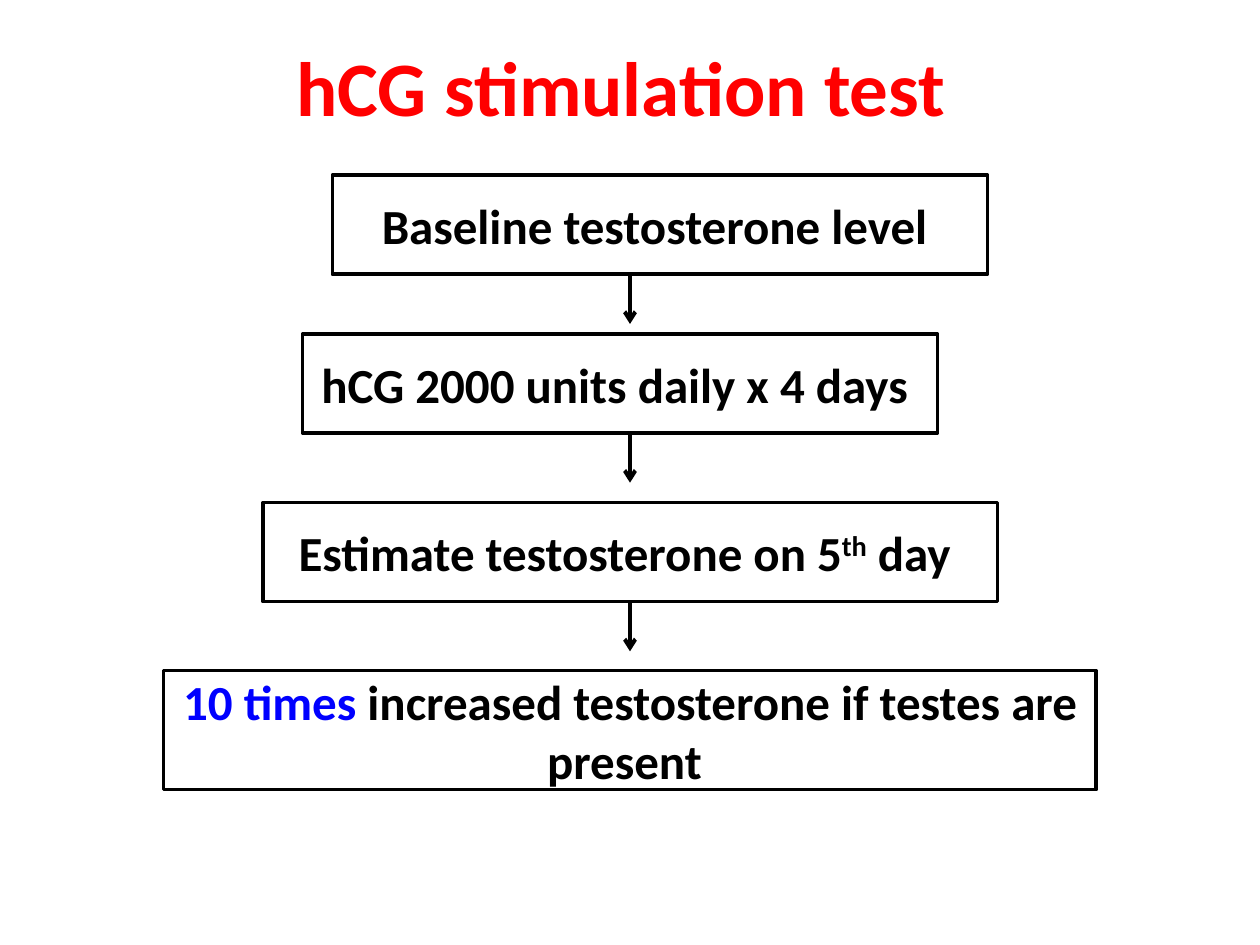
import pptx
import pptx.dml.color
import pptx.enum.shapes
import pptx.enum.text
import pptx.oxml
import pptx.oxml.ns
import pptx.util
from lxml import etree
from pptx.util import Cm, Pt


def rgb(value):
    return pptx.dml.color.RGBColor.from_string(value)


class FlowSlide:
    font = "Calibri"
    ink = "000000"
    paper = "FFFFFF"
    title_color = "FF0000"
    accent = "0000FF"

    def __init__(self, prs):
        self.s = prs.slides.add_slide(prs.slide_layouts[5])

    def style(self, p, size, color):
        p.alignment = pptx.enum.text.PP_ALIGN.CENTER
        p.font.name = self.font
        p.font.size = Pt(size)
        p.font.bold = True
        p.font.color.rgb = rgb(color)

    def title(self, text, left, top, width, height):
        sp = self.s.shapes.title
        sp.left, sp.top, sp.width, sp.height = map(Cm, (left, top, width, height))
        tf = sp.text_frame
        tf.text = text
        tf.vertical_anchor = pptx.enum.text.MSO_ANCHOR.MIDDLE
        self.style(tf.paragraphs[0], 44, self.title_color)

    def box(self, runs, left, top, width, height):
        sp = self.s.shapes.add_shape(
            pptx.enum.shapes.MSO_SHAPE.RECTANGLE, *map(Cm, (left, top, width, height)))
        sp.shadow.inherit = False
        sp.fill.solid()
        sp.fill.fore_color.rgb = rgb(self.paper)
        sp.line.color.rgb = rgb(self.ink)
        sp.line.width = Pt(2)
        tf = sp.text_frame
        tf.word_wrap = True
        tf.vertical_anchor = pptx.enum.text.MSO_ANCHOR.MIDDLE
        p = tf.paragraphs[0]
        self.style(p, 28, self.ink)
        for text, kind in runs:
            r = p.add_run()
            r.text = text
            if kind == "accent":
                r.font.color.rgb = rgb(self.accent)
            elif kind == "super":
                r._r.get_or_add_rPr().set("baseline", "30000")

    def down_arrow(self, x, top, length):
        cx = self.s.shapes.add_connector(
            pptx.enum.shapes.MSO_CONNECTOR.STRAIGHT,
            Cm(x), Cm(top), Cm(x), Cm(top + length))
        cx.line.color.rgb = rgb(self.ink)
        cx.line.width = Pt(2.25)
        qn = pptx.oxml.ns.qn
        etree.SubElement(cx.line._get_or_add_ln(), qn("a:tailEnd"), type="arrow")
        etree.SubElement(cx._element.spPr, qn("a:effectLst"))


def main():
    prs = pptx.Presentation()
    prs.slide_width, prs.slide_height = Cm(25.4), Cm(19.05)
    slide = FlowSlide(prs)
    slide.title("hCG stimulation test ", 1.27, 0.53, 22.86, 2.39)
    steps = [
        ([("Baseline testosterone level ", None)], 6.7, 3.53, 13.21, 2),
        ([("hCG 2000 units daily x 4 days ", None)], 6.1, 6.73, 12.8, 2),
        ([("Estimate testosterone on 5", None), ("th", "super"), (" day ", None)],
         5.3, 10.13, 14.81, 2),
        ([("10 times ", "accent"),
          ("increased testosterone if testes are present ", None)],
         3.3, 13.52, 18.8, 2.4),
    ]
    for step in steps:
        slide.box(*step)
    for runs, left, top, width, height in steps[:-1]:
        slide.down_arrow(12.7, top + height, 1)
    prs.save("out.pptx")


if __name__ == "__main__":
    main()
